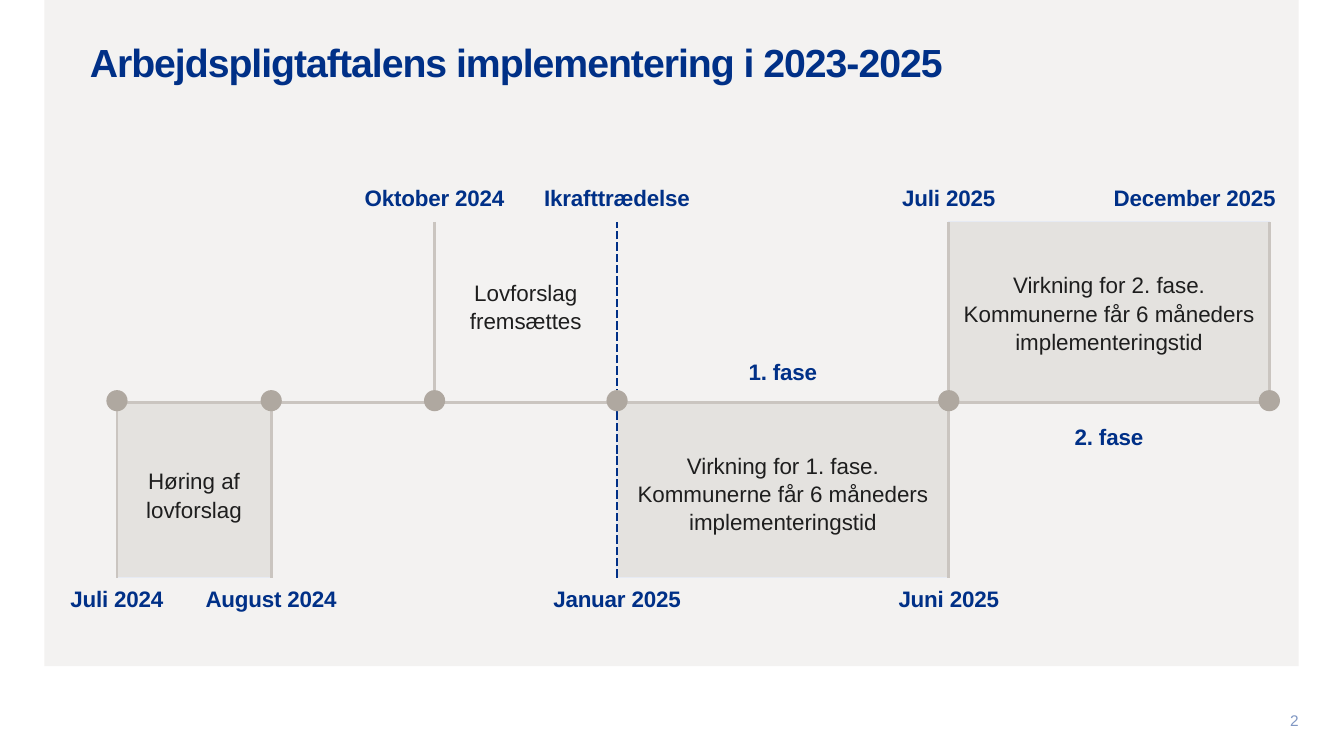
"""Build the timeline slide for the 2023-2025 implementation."""
from lxml.etree import SubElement
from pptx import Presentation
from pptx.dml.color import RGBColor
from pptx.enum.dml import MSO_LINE_DASH_STYLE as Dash
from pptx.enum.shapes import MSO_CONNECTOR as Connector, MSO_SHAPE as Preset
from pptx.enum.text import MSO_ANCHOR as Anchor, MSO_AUTO_SIZE as AutoSize, PP_ALIGN as Align
from pptx.oxml import parse_xml
from pptx.oxml.ns import nsdecls, qn
from pptx.util import Inches, Pt

NAVY = RGBColor(0x00, 0x30, 0x87)
INK = RGBColor(0x1E, 0x1E, 0x1E)
PANEL = RGBColor(0xF3, 0xF2, 0xF1)
PHASE = RGBColor(0xE4, 0xE2, 0xDF)
PHASE_EDGE = RGBColor(0xE6, 0xEA, 0xF3)
RULE = RGBColor(0xCA, 0xC5, 0xC0)
DOT = RGBColor(0xAF, 0xA8, 0xA0)
NUMBER = RGBColor(0x80, 0x97, 0xC3)

JULY, AUGUST, OCTOBER, JANUARY, JUNE, DECEMBER = 1.16, 2.69, 4.31, 6.12, 9.41, 12.59
TOP, AXIS, BOTTOM = 2.2, 3.99, 5.73
DOT_SIZE, DOT_TOP = 0.21, 3.87
DOT_BOTTOM = DOT_TOP + DOT_SIZE
LABEL_HEIGHT = 0.46
PADDING = 0.11


def area(left, top, width, height):
    """Convert a rectangle in inches to slide lengths."""
    return [Inches(value) for value in (left, top, width, height)]


def add_block(page, preset, place, fill, edge=None):
    """Add a flat filled shape with an optional thin edge."""
    block = page.shapes.add_shape(preset, *area(*place))
    block.shadow.inherit = False
    block.fill.solid()
    block.fill.fore_color.rgb = fill
    if edge is None:
        block.line.fill.background()
    else:
        block.line.color.rgb = edge
        block.line.width = Pt(1)
    return block


def add_rule(page, start, end, color=RULE, dash=None):
    """Add a straight line between two points."""
    rule = page.shapes.add_connector(Connector.STRAIGHT, *area(*start, *end))
    rule.line.color.rgb = color
    rule.line.width = Pt(2)
    if dash is not None:
        rule.line.dash_style = dash
    SubElement(rule._element.spPr, qn("a:effectLst"))


def style(para, size, color, bold=False, align=Align.CENTER, spacing=None):
    """Format a paragraph."""
    para.alignment = align
    para.line_spacing = spacing
    para.font.name = "Arial"
    para.font.size = Pt(size)
    para.font.bold = bold
    para.font.color.rgb = color


def track(para, points):
    """Set the letter spacing of every run in a paragraph."""
    for span in para.runs:
        span._r.get_or_add_rPr().set("spc", str(round(points * 100)))


def set_frame(frame, padding, anchor, wrap=True):
    """Set the margins, anchor and wrapping of a text frame."""
    frame.margin_left = frame.margin_right = Inches(padding)
    frame.margin_top = frame.margin_bottom = Inches(padding)
    frame.vertical_anchor = anchor
    frame.word_wrap = wrap
    frame.auto_size = AutoSize.NONE


def add_label(page, text, center, top, width):
    """Add a bold one-line label centred on a date."""
    box = page.shapes.add_textbox(*area(center - width / 2, top, width, LABEL_HEIGHT))
    set_frame(box.text_frame, PADDING, Anchor.TOP, wrap=False)
    para = box.text_frame.paragraphs[0]
    para.text = text
    style(para, 16, NAVY, bold=True, spacing=0.9)
    track(para, -0.1)


def add_event(page, text, start, end, top, height):
    """Add a wrapped description between two dates."""
    box = page.shapes.add_textbox(*area(start, top, end - start, height))
    set_frame(box.text_frame, PADDING, Anchor.MIDDLE)
    para = box.text_frame.paragraphs[0]
    para.text = text
    style(para, 16, INK, spacing=1.05)


def add_title(page, text):
    """Fill and place the title placeholder."""
    title = page.shapes.title
    title.left, title.top, title.width, title.height = area(0.89, 0.43, 11.55, 0.46)
    set_frame(title.text_frame, 0, Anchor.TOP)
    para = title.text_frame.paragraphs[0]
    para.text = text
    style(para, 28, NAVY, bold=True, align=Align.LEFT, spacing=0.9)
    track(para, -0.7)


def add_page_number(page):
    """Add a slide number field at the lower right."""
    box = page.shapes.add_textbox(*area(12.44, 7.08, 0.44, 0.14))
    set_frame(box.text_frame, 0, Anchor.MIDDLE)
    para = box.text_frame.paragraphs[0]
    style(para, 11, NUMBER, align=Align.RIGHT)
    field = parse_xml(
        f'<a:fld {nsdecls("a")} id="{{B6F15528-21DE-4FAA-801E-634DDDAF4B2B}}" type="slidenum">'
        '<a:rPr lang="da-DK" sz="1100"><a:solidFill>'
        f'<a:srgbClr val="{NUMBER}"/></a:solidFill><a:latin typeface="Arial"/></a:rPr>'
        "<a:t>2</a:t></a:fld>")
    para._p.append(field)


def main():
    """Build and save the slide."""
    deck = Presentation()
    deck.slide_width, deck.slide_height = Inches(13.33), Inches(7.5)
    deck.element.set("firstSlideNum", "2")
    page = deck.slides.add_slide(deck.slide_layouts[5])

    panel = add_block(page, Preset.RECTANGLE, (0.44, 0, 12.44, 6.61), PANEL)
    page.shapes._spTree.insert(2, panel._element)
    add_title(page, "Arbejdspligtaftalens implementering i 2023-2025")

    for start, end, top, bottom in ((JANUARY, JUNE, AXIS, BOTTOM),
                                    (JULY, AUGUST, AXIS, BOTTOM),
                                    (JUNE, DECEMBER, TOP, AXIS)):
        place = (start, top, end - start, bottom - top)
        add_block(page, Preset.RECTANGLE, place, PHASE, PHASE_EDGE)

    add_rule(page, (1.06, AXIS), (12.62, AXIS))
    for date in (OCTOBER, JUNE, DECEMBER):
        add_rule(page, (date, TOP), (date, DOT_TOP))
    for date in (JULY, AUGUST, JUNE):
        add_rule(page, (date, DOT_BOTTOM), (date, BOTTOM))
    add_rule(page, (JANUARY, BOTTOM), (JANUARY, TOP), NAVY, Dash.SQUARE_DOT)
    for date in (JULY, AUGUST, OCTOBER, JANUARY, JUNE, DECEMBER):
        place = (date - DOT_SIZE / 2, DOT_TOP, DOT_SIZE, DOT_SIZE)
        add_block(page, Preset.OVAL, place, DOT)

    phase_text = "Virkning for {}. fase. Kommunerne får 6 måneders implementeringstid"
    add_event(page, "Høring af lovforslag", JULY, AUGUST, 4.53, 0.75)
    add_event(page, "Lovforslag fremsættes", OCTOBER, JANUARY, 2.66, 0.75)
    add_event(page, phase_text.format(1), JANUARY, JUNE, 4.38, 1.02)
    add_event(page, phase_text.format(2), JUNE, DECEMBER, 2.59, 1.02)

    above = TOP - LABEL_HEIGHT + 0.01
    for text, center, top, width in (
            ("Oktober 2024", OCTOBER, above, 1.62),
            ("Ikrafttrædelse", JANUARY, above, 1.68),
            ("Juli 2025", JUNE, above, 1.15),
            ("December 2025", 11.85, above, 1.84),
            ("Juli 2024", JULY, BOTTOM, 1.15),
            ("August 2024", AUGUST, BOTTOM, 1.53),
            ("Januar 2025", JANUARY, BOTTOM, 1.49),
            ("Juni 2025", JUNE, BOTTOM, 1.22),
            ("1. fase", (JANUARY + JUNE) / 2, 3.47, 0.9),
            ("2. fase", (JUNE + DECEMBER) / 2, 4.12, 0.9)):
        add_label(page, text, center, top, width)

    add_page_number(page)
    deck.save("out.pptx")


if __name__ == "__main__":
    main()
